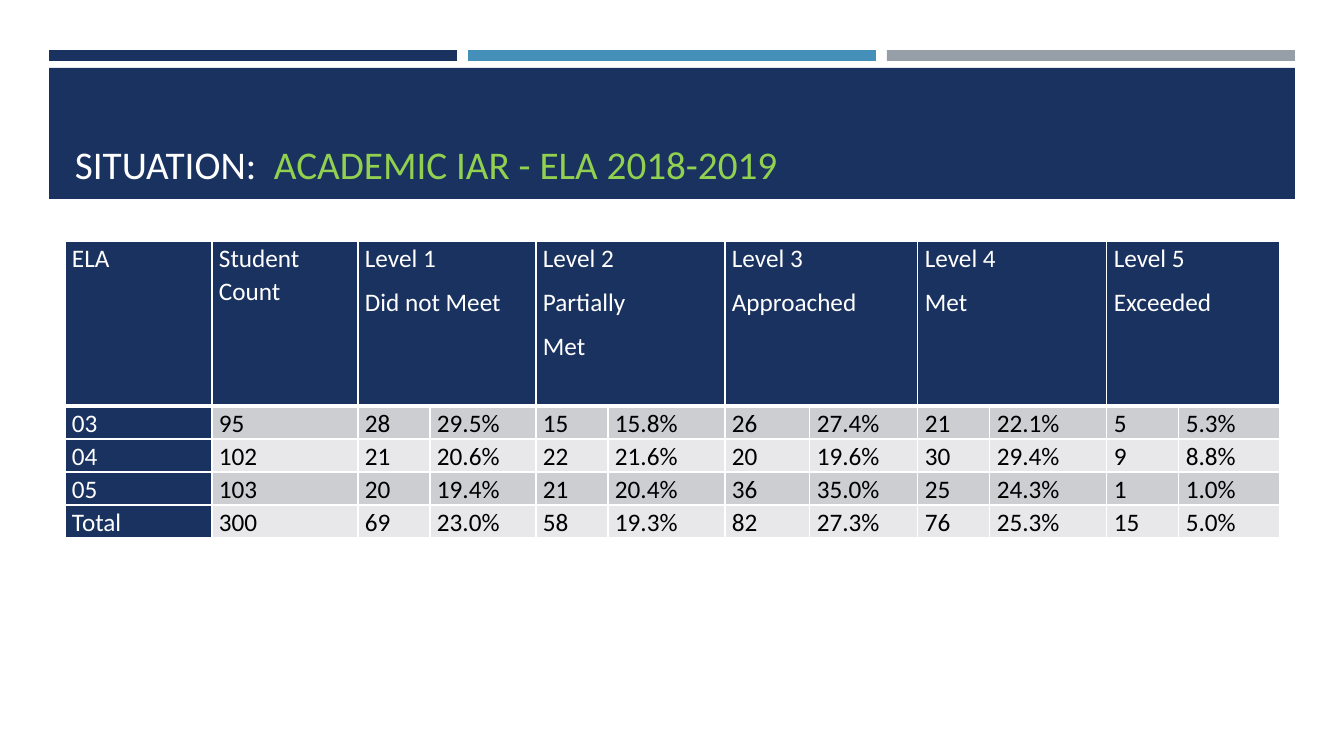
from lxml import etree
from pptx import Presentation
from pptx.dml.color import RGBColor
from pptx.enum.shapes import MSO_SHAPE
from pptx.enum.text import MSO_ANCHOR
from pptx.oxml.ns import qn
from pptx.util import Emu, Pt

RECT = MSO_SHAPE.RECTANGLE
BOTTOM = MSO_ANCHOR.BOTTOM
SCALE = 914400 / 100.8
NAVY, BLUE, GRAY = "1A3260", "4590B8", "969FA7"
GREEN, WHITE, BLACK = "92D050", "FFFFFF", "000000"
BANDS = ("CDCED2", "E8E8EA")

TITLE = [("SITUATION:  ", WHITE), ("ACADEMIC IAR - ELA 2018-2019", GREEN)]
LEVELS = [
    ("Level 1", "Did not Meet"),
    ("Level 2", "Partially", "Met"),
    ("Level 3", "Approached"),
    ("Level 4", "Met"),
    ("Level 5", "Exceeded"),
]
GRADES = [
    "03 95 28 29.5% 15 15.8% 26 27.4% 21 22.1% 5 5.3%",
    "04 102 21 20.6% 22 21.6% 20 19.6% 30 29.4% 9 8.8%",
    "05 103 20 19.4% 21 20.4% 36 35.0% 25 24.3% 1 1.0%",
    "Total 300 69 23.0% 58 19.3% 82 27.3% 76 25.3% 15 5.0%",
]
WIDTHS = [147, 146, 72, 106, 72, 117, 85, 108, 72, 117, 72, 101]
HEIGHTS = [165] + [33] * len(GRADES)


def px(num):
    return Emu(round(num * SCALE))


def tint(code):
    return RGBColor.from_string(code)


def apply(item, style):
    for name, value in style.items():
        setattr(item, name, value)


class Deck:
    font = {"name": "Calibri", "bold": False}
    frame = {"word_wrap": True, "vertical_anchor": BOTTOM, "margin_bottom": px(3)}
    cell = {"margin_left": px(7), "margin_right": px(7), "margin_top": 0, "margin_bottom": 0}
    para = {"line_spacing": 1.07, "space_after": Pt(8)}
    flags = {"first_row": False, "horz_banding": False}

    def __init__(self, wide, high):
        self.show = Presentation()
        apply(self.show, {"slide_width": px(wide), "slide_height": px(high)})
        self.slide = self.show.slides.add_slide(self.show.slide_layouts[6])

    def bar(self, left, top, wide, high, color):
        shape = self.slide.shapes.add_shape(RECT, px(left), px(top), px(wide), px(high))
        shape.shadow.inherit = False
        shape.fill.solid()
        shape.fill.fore_color.rgb = tint(color)
        shape.line.fill.background()

    def run(self, para, text, size, color):
        run = para.add_run()
        run.text = text
        apply(run.font, {**self.font, "size": Pt(size)})
        run.font.color.rgb = tint(color)

    def text(self, left, top, wide, high, runs, size):
        box = self.slide.shapes.add_textbox(px(left), px(top), px(wide), px(high))
        apply(box.text_frame, self.frame)
        for words, color in runs:
            self.run(box.text_frame.paragraphs[0], words, size, color)

    def edge(self, cell, base):
        props = cell._tc.get_or_add_tcPr()
        sides = {"lnL": 1, "lnR": 1, "lnT": 1, "lnB": base}
        for spot, (side, width) in enumerate(sides.items()):
            line = etree.Element(qn("a:" + side), w=str(Pt(width)))
            fill = etree.SubElement(line, qn("a:solidFill"))
            etree.SubElement(fill, qn("a:srgbClr"), val=WHITE)
            props.insert(spot, line)

    def fill(self, cell, lines, back, color, base=1):
        apply(cell, self.cell)
        cell.fill.solid()
        cell.fill.fore_color.rgb = tint(back)
        self.edge(cell, base)
        for spot, words in enumerate(lines):
            frame = cell.text_frame
            para = frame.add_paragraph() if spot else frame.paragraphs[0]
            apply(para, self.para)
            self.run(para, words, 18, color)

    def table(self, left, top, widths, heights):
        table = self.slide.shapes.add_table(
            len(heights), len(widths), px(left), px(top), px(sum(widths)), px(sum(heights))
        ).table
        apply(table, self.flags)
        for col, wide in zip(table.columns, widths):
            col.width = px(wide)
        for row, high in zip(table.rows, heights):
            row.height = px(high)
        return table


def main():
    deck = Deck(1344, 756)
    for spot, color in enumerate((NAVY, BLUE, GRAY)):
        deck.bar(49 + 419 * spot, 50, 408, 11, color)
    deck.bar(49, 68, 1246, 131, NAVY)
    deck.text(65, 78, 1215, 112, TITLE, 28)

    table = deck.table(65, 241, WIDTHS, HEIGHTS)
    heads = [("ELA",), ("Student Count",)]
    for level in LEVELS:
        heads += [level, ()]
    for col, lines in enumerate(heads):
        deck.fill(table.cell(0, col), lines, NAVY, WHITE, 3)
    for col in range(2, len(WIDTHS), 2):
        table.cell(0, col).merge(table.cell(0, col + 1))
    for row, grade in enumerate(GRADES):
        for col, value in enumerate(grade.split()):
            back, color = (BANDS[row % 2], BLACK) if col else (NAVY, WHITE)
            deck.fill(table.cell(row + 1, col), [value], back, color)
    deck.show.save("out.pptx")


if __name__ == "__main__":
    main()
